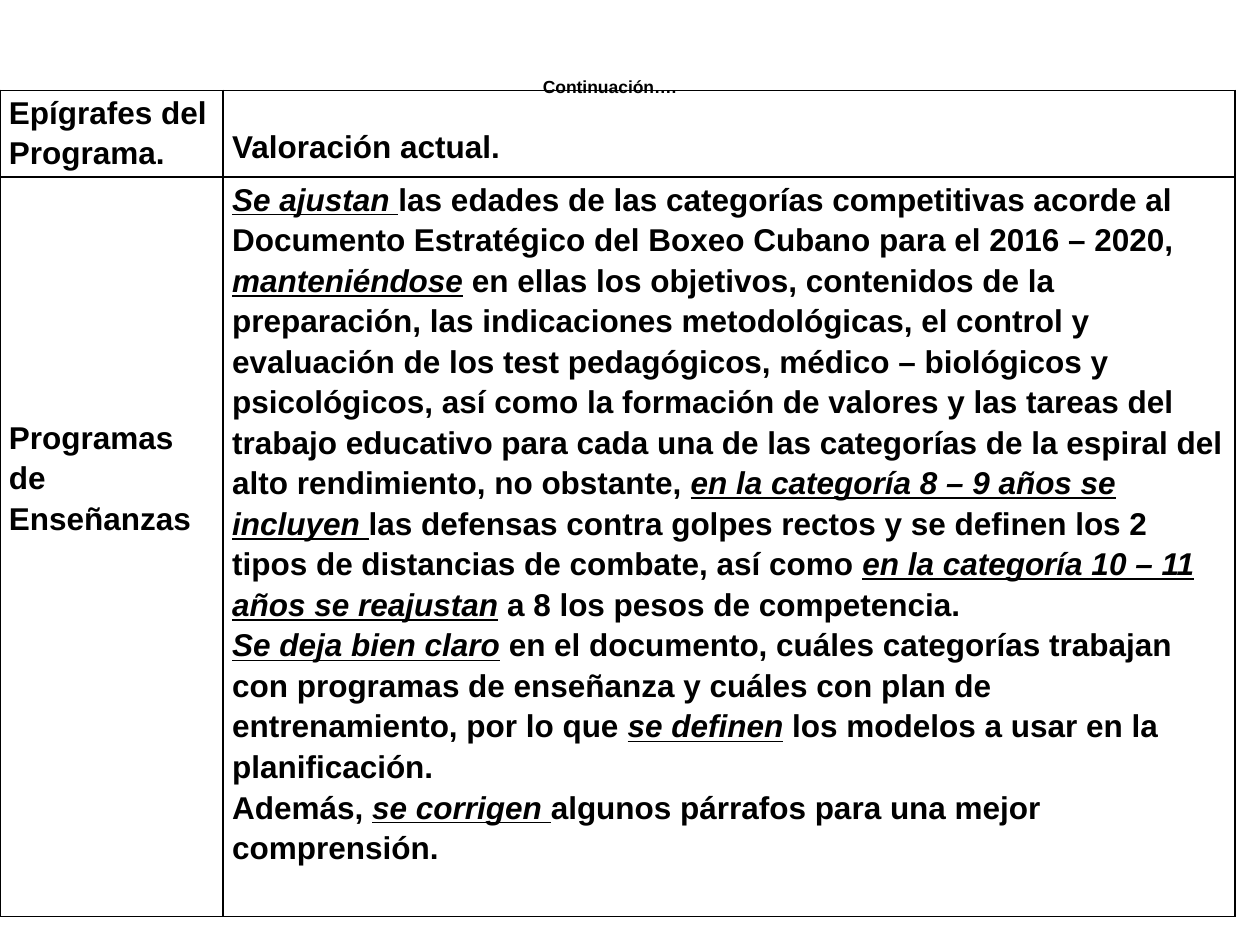
from lxml import etree
from pptx import Presentation
from pptx.dml.color import RGBColor
from pptx.enum.text import MSO_ANCHOR, PP_ALIGN
from pptx.oxml.ns import qn
from pptx.util import Cm, Pt

CENTER = PP_ALIGN.CENTER
LEFT = PP_ALIGN.LEFT
TOP = MSO_ANCHOR.TOP

COLORS = {"text": "000000", "border": "000000"}
FONT = "Arial"
PLAIN, MARKED = False, True

TITLE = [[("Continuación….", PLAIN)]]

PROGRAM_REVIEW = [
    [
        ("Se ajustan ", MARKED),
        ("las edades de las categorías competitivas acorde al Documento "
         "Estratégico del Boxeo Cubano para el 2016 – 2020, ", PLAIN),
        ("manteniéndose", MARKED),
        (" en ellas los objetivos, contenidos de la preparación, las "
         "indicaciones metodológicas, el control y evaluación de los test "
         "pedagógicos, médico – biológicos y psicológicos, así como la "
         "formación de valores y las tareas del trabajo educativo para cada "
         "una de las categorías de la espiral del alto rendimiento, no "
         "obstante, ", PLAIN),
        ("en la categoría 8 – 9 años se incluyen ", MARKED),
        ("las defensas contra golpes rectos y se definen los 2 tipos de "
         "distancias de combate, así como ", PLAIN),
        ("en la categoría 10 – 11 años se reajustan", MARKED),
        (" a 8 los pesos de competencia.", PLAIN),
    ],
    [
        ("Se deja bien claro", MARKED),
        (" en el documento, cuáles categorías trabajan con programas de "
         "enseñanza y cuáles con plan de entrenamiento, por lo que ", PLAIN),
        ("se definen", MARKED),
        (" los modelos a usar en la planificación.", PLAIN),
    ],
    [
        ("Además, ", PLAIN),
        ("se corrigen ", MARKED),
        ("algunos párrafos para una mejor comprensión.", PLAIN),
    ],
]

ROWS = [
    [
        {"paras": [[("Epígrafes del Programa.", PLAIN)]], "drop": 0},
        {"paras": [[("Valoración actual.", PLAIN)]], "drop": 0.69},
    ],
    [
        {"paras": [[("Programas de Enseñanzas", PLAIN)]], "drop": 4.8},
        {"paras": PROGRAM_REVIEW, "drop": 0},
    ],
]
COLUMN_WIDTHS = [4.5, 20.4]
ROW_HEIGHTS = [1.75, 14.9]
TABLE_TOP = 1.82
SIDE_MARGIN = 0.18


def write_text(frame, paras, size, align):
    frame.word_wrap = True
    for index, spans in enumerate(paras):
        para = frame.add_paragraph() if index else frame.paragraphs[0]
        para.alignment = align
        para.line_spacing = 1.15
        for text, marked in spans:
            span = para.add_run()
            span.text = text
            font = span.font
            font.name = FONT
            font.size = Pt(size)
            font.bold = True
            font.italic = font.underline = marked
            font.color.rgb = RGBColor.from_string(COLORS["text"])


def draw_borders(cell):
    properties = cell._tc.get_or_add_tcPr()
    for index, side in enumerate(("lnL", "lnR", "lnT", "lnB")):
        line = etree.Element(qn(f"a:{side}"), w=str(Pt(1)))
        fill = etree.SubElement(line, qn("a:solidFill"))
        etree.SubElement(fill, qn("a:srgbClr"), val=COLORS["border"])
        properties.insert(index, line)


def add_review_table(page):
    table = page.shapes.add_table(
        len(ROWS), len(COLUMN_WIDTHS), Cm(0), Cm(TABLE_TOP),
        Cm(sum(COLUMN_WIDTHS)), Cm(sum(ROW_HEIGHTS))).table
    table.first_row = table.horz_banding = False
    for column, width in zip(table.columns, COLUMN_WIDTHS):
        column.width = Cm(width)
    for row, height, contents in zip(table.rows, ROW_HEIGHTS, ROWS):
        row.height = Cm(height)
        for cell, content in zip(row.cells, contents):
            cell.fill.background()
            cell.vertical_anchor = TOP
            cell.margin_left = cell.margin_right = Cm(SIDE_MARGIN)
            cell.margin_top = Cm(content["drop"])
            cell.margin_bottom = Cm(0)
            write_text(cell.text_frame, content["paras"], 18, LEFT)
            draw_borders(cell)


def main():
    deck = Presentation()
    deck.slide_width, deck.slide_height = Cm(25.4), Cm(19.05)
    page = deck.slides.add_slide(deck.slide_layouts[6])
    box = page.shapes.add_textbox(Cm(1.09), Cm(1.35), Cm(22.4), Cm(0.74))
    write_text(box.text_frame, TITLE, 10, CENTER)
    add_review_table(page)
    deck.save("out.pptx")


if __name__ == "__main__":
    main()
